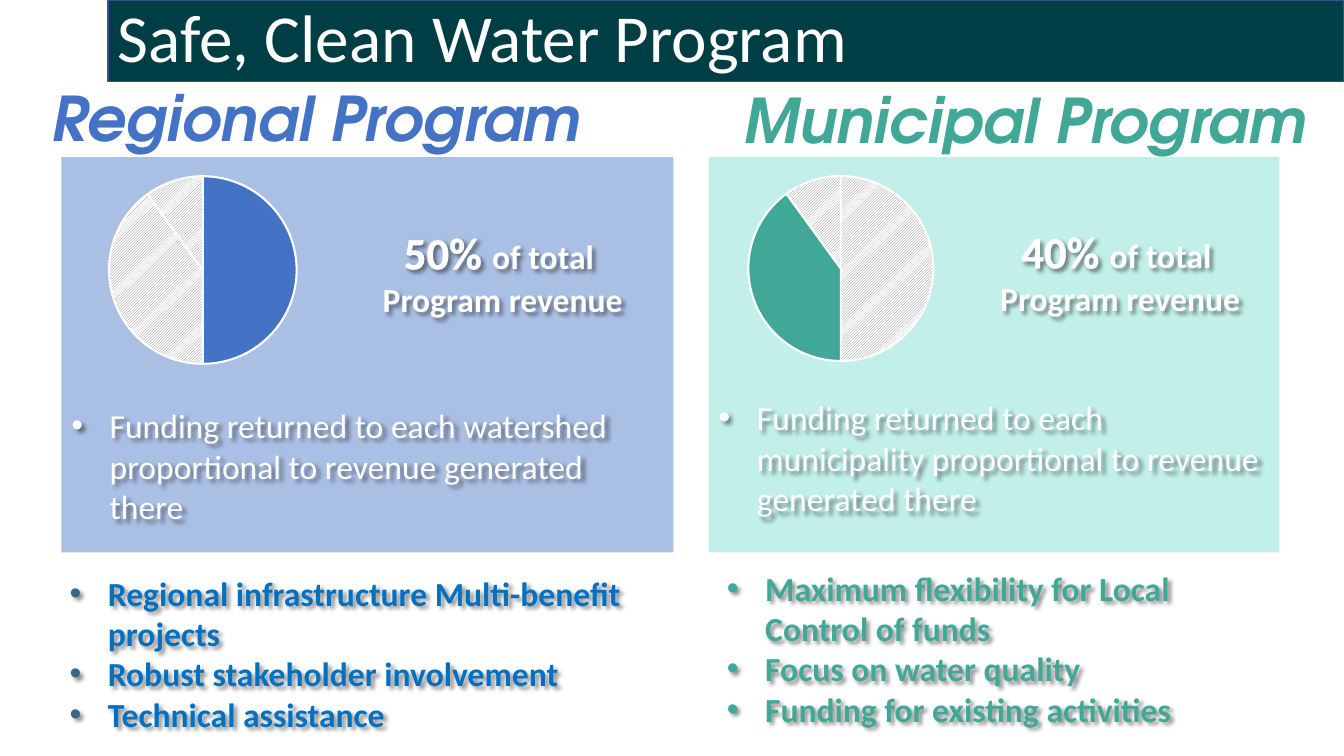
from dataclasses import dataclass

from lxml import etree
from pptx import Presentation
from pptx.chart.data import CategoryChartData
from pptx.dml.color import RGBColor
from pptx.enum.chart import XL_CHART_TYPE
from pptx.enum.dml import MSO_PATTERN
from pptx.enum.shapes import MSO_SHAPE
from pptx.enum.text import MSO_ANCHOR, MSO_AUTO_SIZE, PP_ALIGN
from pptx.oxml import parse_xml
from pptx.oxml.ns import nsdecls, qn
from pptx.util import Inches, Pt

PIE, RECTANGLE = XL_CHART_TYPE.PIE, MSO_SHAPE.RECTANGLE
HATCH = MSO_PATTERN.DARK_UPWARD_DIAGONAL
LEFT, CENTER = PP_ALIGN.LEFT, PP_ALIGN.CENTER
TOP, MIDDLE = MSO_ANCHOR.TOP, MSO_ANCHOR.MIDDLE
NO_FIT = MSO_AUTO_SIZE.NONE


@dataclass(frozen=True)
class Theme:
    white: str = "FFFFFF"
    black: str = "000000"
    band: str = "003E46"
    band_line: str = "325491"
    hatch: str = "808080"
    body_font: str = "Calibri"
    heading_font: str = "TeX Gyre Adventor"
    title_size: int = 48
    heading_size: int = 44
    share_size: int = 32
    body_size: int = 24
    chart_size: int = 10


@dataclass(frozen=True)
class Program:
    heading: str
    share: str
    funding: str
    benefits: tuple
    slice_index: int
    color: str
    panel_color: str
    benefit_color: str
    bullet_color: str
    # Boxes are left, top, width, height; all but the panel are relative to it
    panel: tuple
    heading_box: tuple
    pie_box: tuple
    share_box: tuple
    funding_box: tuple
    benefits_box: tuple


THEME = Theme()
REVENUE = (50, 40, 10)
PIE_FILL = 0.87  # diameter as a part of the chart height

REGIONAL = Program(
    "Regional Program", "50% ",
    "Funding returned to each watershed proportional to revenue generated there",
    ("Regional infrastructure Multi-benefit projects",
     "Robust stakeholder involvement", "Technical assistance"),
    0, "4472C4", "4472C4", "0070C0", "3D6585",
    panel=(0.61, 1.56, 6.07, 3.92), heading_box=(-0.2, -1.05, 6, 1.39),
    pie_box=(-0.22, 0.05, 3.24, 2.14), share_box=(2.53, 0.62, 3.69, 1.06),
    funding_box=(0, 2.41, 6.07, 1.33), benefits_box=(-0.02, 4.07, 5.97, 1.72))
MUNICIPAL = Program(
    "Municipal Program", "40% ",
    "Funding returned to each municipality proportional to revenue generated there",
    ("Maximum flexibility for Local Control of funds",
     "Focus on water quality", "Funding for existing activities"),
    1, "41A796", "78DCD2", "41A796", "41A796",
    panel=(7.03, 1.56, 5.66, 3.92), heading_box=(0.25, -1.03, 6.05, 1.39),
    pie_box=(-0.2, 0.05, 3.02, 2.11), share_box=(2.36, 0.61, 3.44, 1.04),
    funding_box=(0, 2.33, 5.66, 1.31), benefits_box=(0.08, 4.02, 5.45, 1.72))


def rgb(color):
    return RGBColor.from_string(color)


def within(panel, box):
    left, top, width, height = box
    return [Inches(v) for v in (panel[0] + left, panel[1] + top, width, height)]


def place(shape, box):
    shape.left, shape.top, shape.width, shape.height = box


def style(run, size, color, bold=False, font=THEME.body_font):
    run.font.name, run.font.size, run.font.bold = font, Pt(size), bold
    run.font.color.rgb = rgb(color)


def outline(run):
    run.font._element.insert(0, parse_xml(
        f'<a:ln {nsdecls("a")} w="9525"><a:solidFill>'
        f'<a:srgbClr val="{THEME.white}"/></a:solidFill></a:ln>'))


def add_text_shadow(shape):
    shape._element.spPr.append(parse_xml(
        f'<a:effectLst {nsdecls("a")}><a:outerShdw blurRad="38100" dist="38100" '
        'dir="2700000" algn="tl"><a:srgbClr val="000000"><a:alpha val="43000"/>'
        '</a:srgbClr></a:outerShdw></a:effectLst>'))


def write_lines(shape, lines, anchor=TOP):
    frame = shape.text_frame
    frame.word_wrap, frame.auto_size = True, NO_FIT
    frame.vertical_anchor = anchor
    frame.text = "\n".join(lines)
    return frame.paragraphs


def write_bullets(shape, lines, color, bullet_color, bold=False):
    for paragraph in write_lines(shape, lines):
        props = paragraph._p.get_or_add_pPr()
        props.set("marL", str(Inches(0.38)))
        props.set("indent", str(-Inches(0.38)))
        bullet = etree.SubElement(props, qn("a:buClr"))
        etree.SubElement(bullet, qn("a:srgbClr"), val=bullet_color)
        etree.SubElement(props, qn("a:buFont"), typeface="Arial")
        etree.SubElement(props, qn("a:buChar"), char="•")
        paragraph.space_before = Pt(0)
        style(paragraph.runs[0], THEME.body_size, color, bold)
    add_text_shadow(shape)


def add_title(slide, text, box):
    title = slide.shapes.title
    place(title, [Inches(v) for v in box])
    title.fill.solid()
    title.fill.fore_color.rgb = rgb(THEME.band)
    title.line.color.rgb, title.line.width = rgb(THEME.band_line), Pt(1)
    paragraph = write_lines(title, [text], MIDDLE)[0]
    paragraph.alignment, paragraph.line_spacing = LEFT, 0.9
    style(paragraph.runs[0], THEME.title_size, THEME.white)


def add_panel(slide, program):
    panel = slide.shapes.add_shape(RECTANGLE, *[Inches(v) for v in program.panel])
    panel.shadow.inherit = False
    panel.fill.solid()
    panel.fill.fore_color.rgb = rgb(program.panel_color)
    color = panel._element.spPr.find(".//" + qn("a:srgbClr"))
    etree.SubElement(color, qn("a:alpha"), val="45000")
    panel.line.fill.background()


def add_revenue_pie(slide, program):
    revenue = CategoryChartData()
    revenue.categories = ["1", "2", "3"]
    revenue.add_series("Series 1", REVENUE)
    box = within(program.panel, program.pie_box)
    chart = slide.shapes.add_chart(PIE, *box, revenue).chart
    chart.has_legend = chart.has_title = False
    chart.font.name, chart.font.size = THEME.body_font, Pt(THEME.chart_size)
    chart.font.color.rgb = rgb(THEME.black)
    plot = chart.plots[0]
    plot.vary_by_categories = True
    for index in range(len(REVENUE)):
        part = plot.series[0].points[index].format
        if index == program.slice_index:
            part.fill.solid()
            part.fill.fore_color.rgb = rgb(program.color)
        else:
            part.fill.patterned()
            part.fill.pattern = HATCH
            part.fill.fore_color.rgb = rgb(THEME.hatch)
            part.fill.back_color.rgb = rgb(THEME.white)
        part.line.color.rgb, part.line.width = rgb(THEME.white), Pt(1.5)
    # Centre the circle in the chart box
    area = chart._chartSpace.chart.plotArea
    for old in area.findall(qn("c:layout")):
        area.remove(old)
    w, h = PIE_FILL * box[3] / box[2], PIE_FILL
    area.insert(0, parse_xml(
        f'<c:layout {nsdecls("c")}><c:manualLayout><c:layoutTarget val="inner"/>'
        '<c:xMode val="edge"/><c:yMode val="edge"/>'
        f'<c:x val="{(1 - w) / 2:.3f}"/><c:y val="{(1 - h) / 2:.3f}"/>'
        f'<c:w val="{w:.3f}"/><c:h val="{h:.3f}"/></c:manualLayout></c:layout>'))


def add_program(slide, program, benefits):
    add_panel(slide, program)
    add_revenue_pie(slide, program)

    # Heading above the panel
    heading = slide.shapes.add_textbox(*within(program.panel, program.heading_box))
    paragraph = write_lines(heading, [program.heading], MIDDLE)[0]
    paragraph.line_spacing = 0.9
    name = paragraph.runs[0]
    style(name, THEME.heading_size, program.color, True, THEME.heading_font)
    name.font.italic = True
    outline(name)

    # Share of revenue beside the pie
    share = slide.shapes.add_textbox(*within(program.panel, program.share_box))
    first, second = write_lines(share, [program.share, "Program revenue"])
    first.add_run().text = "of total "
    first.alignment = second.alignment = CENTER
    for run in (*first.runs, *second.runs):
        style(run, THEME.body_size, THEME.white, True)
    first.runs[0].font.size = Pt(THEME.share_size)
    outline(first.runs[0])
    add_text_shadow(share)

    # Funding rule and benefits
    funding = slide.shapes.add_textbox(*within(program.panel, program.funding_box))
    write_bullets(funding, [program.funding], THEME.white, THEME.white)
    place(benefits, within(program.panel, program.benefits_box))
    write_bullets(benefits, program.benefits, program.benefit_color,
                  program.bullet_color, True)


def main():
    deck = Presentation()
    deck.slide_width, deck.slide_height = Inches(13.33), Inches(7.5)
    slide = deck.slides.add_slide(deck.slide_layouts[3])
    add_title(slide, "Safe, Clean Water Program", (1.07, 0, 12.26, 0.81))
    for index, program in enumerate((REGIONAL, MUNICIPAL), 1):
        add_program(slide, program, slide.placeholders[index])
    deck.save("out.pptx")


if __name__ == "__main__":
    main()
